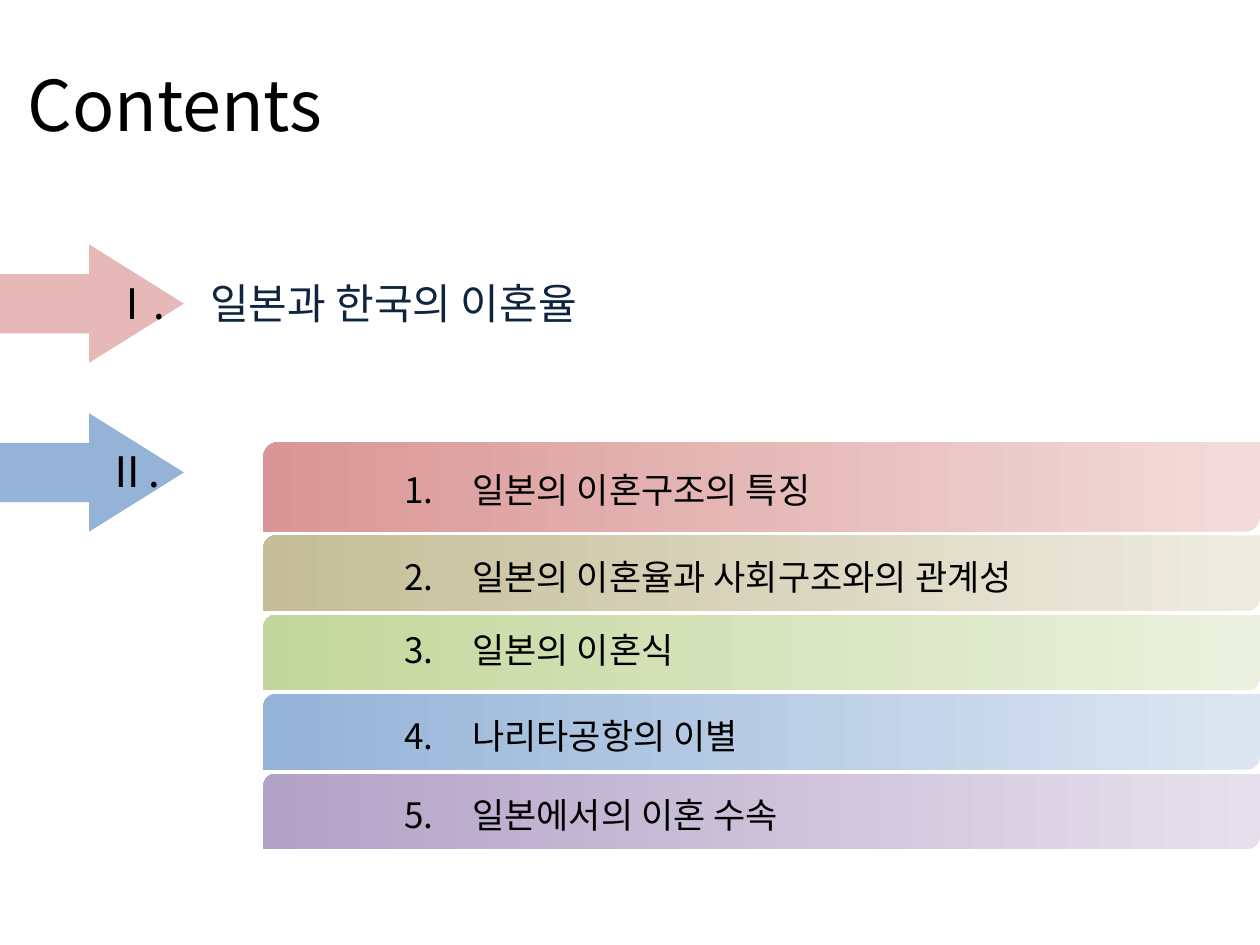
"""Build the contents slide with two chapter arrows and five gradient topic bars."""
from lxml.etree import SubElement
from pptx import Presentation
from pptx.dml.color import RGBColor
from pptx.enum.shapes import MSO_SHAPE
from pptx.enum.text import MSO_AUTO_SIZE
from pptx.oxml.ns import qn
from pptx.util import Inches, Pt

FONT = "Noto Sans CJK KR"
BLACK = RGBColor(0x00, 0x00, 0x00)
NAVY = RGBColor(0x0F, 0x24, 0x3E)
PINK = RGBColor(0xE6, 0xB9, 0xB8)
BLUE = RGBColor(0x95, 0xB3, 0xD7)
RED, RED_LIGHT = RGBColor(0xD9, 0x96, 0x94), RGBColor(0xF2, 0xDC, 0xDB)
TAN, TAN_LIGHT = RGBColor(0xC4, 0xBD, 0x97), RGBColor(0xEE, 0xEC, 0xE1)
GREEN, GREEN_LIGHT = RGBColor(0xC3, 0xD6, 0x9B), RGBColor(0xEB, 0xF1, 0xDE)
BLUE_LIGHT = RGBColor(0xDC, 0xE6, 0xF2)
PURPLE, PURPLE_LIGHT = RGBColor(0xB3, 0xA2, 0xC7), RGBColor(0xE6, 0xE0, 0xEC)

SLIDE_W, SLIDE_H = 10, 7.5
BAR_LEFT, BAR_TOP, BAR_GAP = 2.09, 3.51, 0.03
TOPIC_LEFT, TOPIC_H = 3.11, 0.44
ARROW_W, ARROW_H = 1.46, 0.94

# (text, bar height, text offset in bar, text width, light end, dark end)
TOPICS = [
    ("일본의 이혼구조의 특징", 0.71, 0.16, 6.22, RED_LIGHT, RED),
    ("일본의 이혼율과 사회구조와의 관계성", 0.6, 0.11, 6.89, TAN_LIGHT, TAN),
    ("일본의 이혼식", 0.6, 0.06, 5.75, GREEN_LIGHT, GREEN),
    ("나리타공항의 이별", 0.6, 0.11, 4.8, BLUE_LIGHT, BLUE),
    ("일본에서의 이혼 수속", 0.6, 0.11, 4.8, PURPLE_LIGHT, PURPLE),
]
ARROWS = [(1.94, PINK), (3.28, BLUE)]


def add_block(slide, kind, box):
    sp = slide.shapes.add_shape(kind, *map(Inches, box))
    sp.shadow.inherit = False
    sp.line.fill.background()
    return sp


def add_text(slide, box, runs, size, margin=0, hanging=0):
    tf = slide.shapes.add_textbox(*map(Inches, box)).text_frame
    tf.word_wrap = True
    tf.auto_size = MSO_AUTO_SIZE.SHAPE_TO_FIT_TEXT
    p = tf.paragraphs[0]
    if hanging:
        pPr = p._p.get_or_add_pPr()
        pPr.set("marL", str(Inches(margin)))
        pPr.set("indent", str(-Inches(hanging)))
    for text, color in runs:
        r = p.add_run()
        r.text = text
        for name, value in {"name": FONT, "size": Pt(size)}.items():
            setattr(r.font, name, value)
        r.font.color.rgb = color
        SubElement(r._r.get_or_add_rPr(), qn("a:ea"), typeface=FONT)


def main():
    prs = Presentation()
    prs.slide_width, prs.slide_height = Inches(SLIDE_W), Inches(SLIDE_H)
    s = prs.slides.add_slide(prs.slide_layouts[6])

    add_text(s, (0.12, 0.44, 3.78, 0.77), [("Contents", BLACK)], 40)

    for top, color in ARROWS:
        sp = add_block(s, MSO_SHAPE.RIGHT_ARROW, (0, top, ARROW_W, ARROW_H))
        sp.adjustments[1] = 0.8
        sp.fill.solid()
        sp.fill.fore_color.rgb = color
    add_text(s, (0.67, 2.15, 4.17, 0.5),
             [("Ⅰ.\t", BLACK), ("일본과 한국의 이혼율", NAVY)], 24, 0.9, 0.78)
    add_text(s, (0.75, 3.49, 0.79, 0.5), [("Ⅱ.", BLACK)], 24)

    top = BAR_TOP
    for number, (text, height, offset, width, light, dark) in enumerate(TOPICS, 1):
        sp = add_block(s, MSO_SHAPE.ROUND_2_DIAG_RECTANGLE,
                       (BAR_LEFT, top, SLIDE_W - BAR_LEFT, height))
        sp.fill.gradient()
        sp.fill.gradient_angle = 180
        for stop, position, color in zip(sp.fill.gradient_stops, (0, 1), (light, dark)):
            stop.position = position
            stop.color.rgb = color
        add_text(s, (TOPIC_LEFT, top + offset, width, TOPIC_H),
                 [(f"{number}.\t{text}", BLACK)], 20, 0.54, 0.54)
        top += height + BAR_GAP

    prs.save("out.pptx")


if __name__ == "__main__":
    main()
